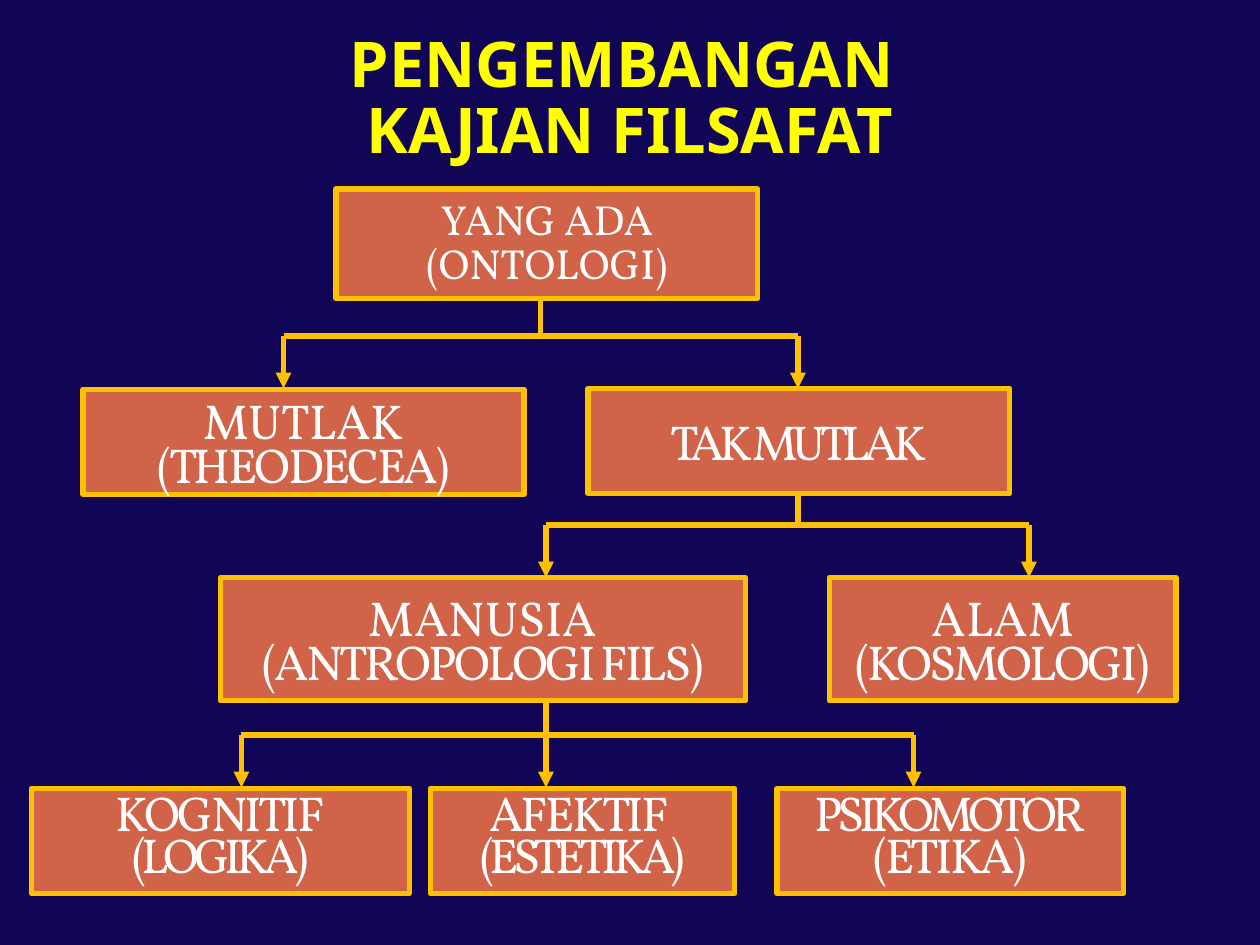
import pptx
import pptx.util
import pptx.dml.color
import pptx.enum.shapes
import pptx.enum.text
import pptx.oxml.ns
import lxml.etree

Pt = pptx.util.Pt
COLORS = {"background": "110656", "title": "FFFF00", "box": "D16349",
          "line": "FFC000", "text": "FFFFFF"}
TIGHT, TIGHTER = -1.5, -3


def rgb(name):
    return pptx.dml.color.RGBColor.from_string(COLORS[name])


def write(frame, paragraphs, size=28, font="Vollkorn", color="text", bold=False):
    """Each paragraph is (line spacing in points or None, [(text, letter spacing), ...])."""
    frame.word_wrap = True
    frame.vertical_anchor = pptx.enum.text.MSO_ANCHOR.MIDDLE
    for index, (leading, pieces) in enumerate(paragraphs):
        paragraph = frame.add_paragraph() if index else frame.paragraphs[0]
        paragraph.alignment = pptx.enum.text.PP_ALIGN.CENTER
        if leading:
            paragraph.line_spacing = Pt(leading)
        for text, tracking in pieces:
            for number, line in enumerate(text.split("\n")):
                if number:
                    paragraph.add_line_break()
                run = paragraph.add_run()
                run.text = line
                run.font.size = Pt(size)
                run.font.name = font
                run.font.bold = bold
                run.font.color.rgb = rgb(color)
                if tracking:
                    run.font._element.set("spc", str(int(tracking * 100)))


deck = pptx.Presentation()
deck.slide_width, deck.slide_height = Pt(720), Pt(540)
slide = deck.slides.add_slide(deck.slide_layouts[6])
slide.background.fill.solid()
slide.background.fill.fore_color.rgb = rgb("background")

# Title
title = slide.shapes.add_textbox(Pt(36), Pt(24), Pt(648), Pt(66))
write(title.text_frame, [(38, [("PENGEMBANGAN \nKAJIAN FILSAFAT", 0)])],
      size=36, font="Noto Sans", color="title", bold=True)

# Branches: trunk x, trunk top, crossbar y, arrow tip y, x of each child
branches = [
    (309, 169, 192, 222, [162, 456]),
    (456, 282, 300, 330, [312, 588]),
    (312, 402, 420, 450, [138, 312, 522]),
]
for trunk, top, bar, tip, children in branches:
    segments = [(trunk, top, trunk, bar, False),
                (children[0], bar, children[-1], bar, False)]
    segments += [(child, bar, child, tip, True) for child in children]
    for x1, y1, x2, y2, arrow in segments:
        branch = slide.shapes.add_connector(
            pptx.enum.shapes.MSO_CONNECTOR.STRAIGHT, Pt(x1), Pt(y1), Pt(x2), Pt(y2))
        branch.line.color.rgb = rgb("line")
        branch.line.width = Pt(3)
        if arrow:
            lxml.etree.SubElement(branch.line._get_or_add_ln(),
                                  pptx.oxml.ns.qn("a:tailEnd"), type="triangle")
        lxml.etree.SubElement(branch._element.spPr, pptx.oxml.ns.qn("a:effectLst"))

# Boxes: left, top, width, height, text size, paragraphs
boxes = [
    (192, 108, 241, 62.5, 24, [(25, [("YANG ADA (ONTOLOGI)", 0)])]),
    (336, 222, 241, 60, 28, [(None, [("TAK MUTLAK", TIGHTER)])]),
    (47.5, 222.5, 252, 60, 28,
     [(None, [("MUTLAK", 0)]), (25, [("(THEODECEA)", TIGHT)])]),
    (126, 330, 300, 70.5, 28,
     [(None, [("MANUSIA", 0)]), (25, [("(ANTROPOLOGI FILS)", TIGHT)])]),
    (474, 330, 198, 70.5, 28,
     [(None, [("ALAM", 0)]), (25, [("(KOSMOLOGI)", TIGHT)])]),
    (444, 450.5, 198, 60, 28,
     [(24, [("PSIKOMOTOR", TIGHTER), (" (ETIKA)", TIGHT)])]),
    (246, 450.5, 174, 60, 28,
     [(24, [("AFEKTIF ", TIGHT)]), (24, [("(ESTETIKA)", TIGHTER)])]),
    (18, 450.5, 216, 60, 28,
     [(24, [("KOGNITIF", TIGHT)]), (24, [("(LOGIKA)", TIGHTER)])]),
]
for left, top, width, height, size, paragraphs in boxes:
    box = slide.shapes.add_shape(pptx.enum.shapes.MSO_SHAPE.RECTANGLE,
                                 Pt(left), Pt(top), Pt(width), Pt(height))
    box.shadow.inherit = False
    box.fill.solid()
    box.fill.fore_color.rgb = rgb("box")
    box.line.color.rgb = rgb("line")
    box.line.width = Pt(3)
    write(box.text_frame, paragraphs, size=size)

deck.save("out.pptx")
